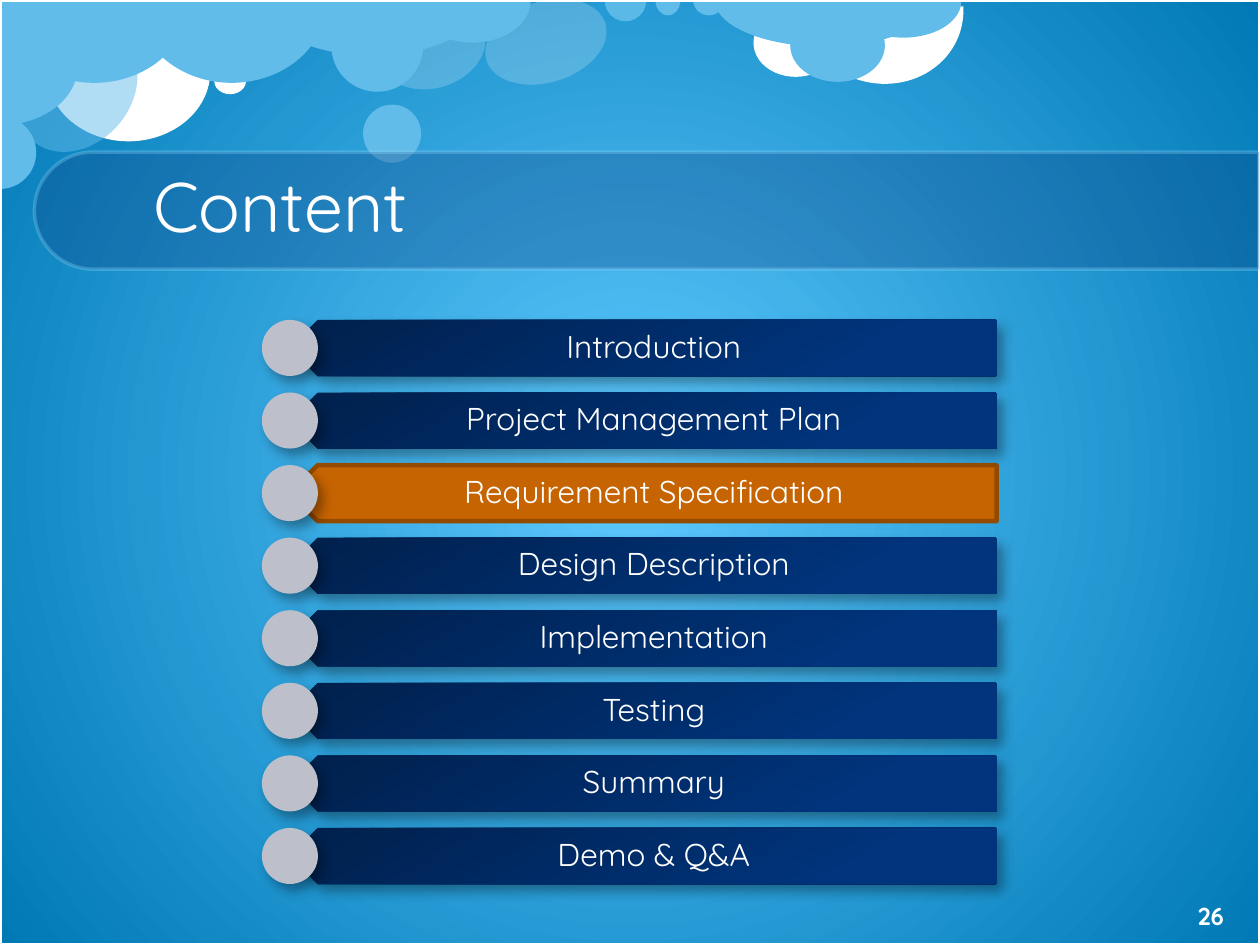
"""Build an agenda slide with a cloudy sky and one highlighted section."""
from lxml import etree
from pptx import Presentation
from pptx.dml.color import RGBColor
from pptx.enum.shapes import MSO_SHAPE
from pptx.enum.text import MSO_ANCHOR, PP_ALIGN
from pptx.oxml import parse_xml
from pptx.oxml.ns import nsdecls, qn
from pptx.util import Cm, Pt

OVAL, PIE, ARC = MSO_SHAPE.OVAL, MSO_SHAPE.PIE, MSO_SHAPE.ARC
RECT, PLATE = MSO_SHAPE.RECTANGLE, MSO_SHAPE.PENTAGON
BAND = MSO_SHAPE.ROUND_2_SAME_RECTANGLE
LEFT, CENTER = PP_ALIGN.LEFT, PP_ALIGN.CENTER
MIDDLE = MSO_ANCHOR.MIDDLE

THEME = {
    "font": "Quicksand", "title": 40, "item": 18, "page": 14,
    "white": "FFFFFF", "cloud": "62BCE9", "pale": "8FD9FB",
    "glow": "5DC9FF", "sky": "0079B5", "band": "073779",
    "dark": "00204C", "navy": "00347C", "dot": "BDBFCB",
    "mark": "C76402", "edge": "934A01", "shade": "000000",
}


def add_form(kind, box, fill=None, alpha=100, line=None, width=2, fade=100,
             turn=0, adj=(), shade=False):
    form = slide.shapes.add_shape(kind, *map(Cm, box))
    form.shadow.inherit = False
    form.rotation = turn
    for i, value in enumerate(adj):
        form.adjustments[i] = value
    for part, name, share in ((form.fill, fill, alpha),
                              (form.line.fill, line, fade)):
        if name is None:
            part.background()
        elif isinstance(name, tuple):
            part.gradient()
            part.gradient_angle = 120
            for stop, tone, place in zip(part.gradient_stops, name, (0, 0.8)):
                stop.color.rgb = RGBColor.from_string(THEME[tone])
                stop.position = place
        else:
            part.solid()
            part.fore_color.rgb = RGBColor.from_string(THEME[name])
            if share < 100:
                root = form._element.spPr
                if part is not form.fill:
                    root = root.find(qn("a:ln"))
                tone = root.find(qn("a:solidFill"))[0]
                etree.SubElement(tone, qn("a:alpha"), val=str(share * 1000))
    if line:
        form.line.width = Pt(width)
    if shade:
        form._element.spPr.find(qn("a:effectLst")).append(parse_xml(
            f'<a:outerShdw {nsdecls("a")} blurRad="{Pt(7)}" dist="{Pt(5)}" '
            f'dir="{50 * 60000}" algn="tl" rotWithShape="0">'
            f'<a:srgbClr val="{THEME["shade"]}"><a:alpha val="35000"/>'
            '</a:srgbClr></a:outerShdw>'))


def add_text(text, box, size, align=CENTER, bold=False, space=None,
             inset=(0.25, 0.13, 0.25, 0.13)):
    frame = slide.shapes.add_textbox(*map(Cm, box)).text_frame
    frame.word_wrap = True
    frame.vertical_anchor = MIDDLE
    (frame.margin_left, frame.margin_top,
     frame.margin_right, frame.margin_bottom) = map(Cm, inset)
    para = frame.paragraphs[0]
    para.alignment = align
    para.line_spacing = space
    run = para.add_run()
    run.text = text
    run.font.name = THEME["font"]
    run.font.size = Pt(THEME[size])
    run.font.bold = bold
    run.font.color.rgb = RGBColor.from_string(THEME["white"])


deck = Presentation()
deck.slide_width, deck.slide_height = Cm(25.4), Cm(19.05)
slide = deck.slides.add_slide(deck.slide_layouts[6])

back = slide.background.fill
back.gradient()
for stop, tone in zip(back.gradient_stops, ("glow", "sky")):
    stop.color.rgb = RGBColor.from_string(THEME[tone])
lin = next(slide._element.iter(qn("a:lin")))
lin.getparent().replace(lin, parse_xml(
    f'<a:path {nsdecls("a")} path="circle">'
    '<a:fillToRect l="50000" t="50000" r="50000" b="50000"/></a:path>'))

HALF = (0, 108)
CLOUDS = (
    (OVAL, (7.9, -0.13, 1.63, 2.18), "white", 20, 72.8, ()),
    (OVAL, (0.94, 0.03, 3.3, 2.82), "white", 100, 0, ()),
    (ARC, (16.23, -1.52, 3.07, 3.33), "white", 100, 106.5, (151.8, 44.48)),
    (OVAL, (15.19, 0.18, 1.7, 1.37), "white", 100, 0, ()),
    (PIE, (-0.03, -1.68, 3.86, 3.35), "cloud", 100, 0, HALF),
    (PIE, (5.28, -1.12, 4.45, 2.24), "cloud", 100, 0, HALF),
    (OVAL, (7.32, 2.11, 1.17, 1.17), "cloud", 100, 0, ()),
    (OVAL, (0.48, 0.46, 2.16, 2.72), "cloud", 50, 41.8, ()),
    (PIE, (-0.74, 2.34, 1.47, 1.47), "cloud", 100, 270, HALF),
    (OVAL, (4.32, 1.37, 0.64, 0.53), "white", 100, 0, ()),
    (PIE, (2.74, -1.68, 3.86, 3.35), "cloud", 100, 0, HALF),
    (PIE, (14.4, -0.97, 4.45, 1.91), "cloud", 100, 0, HALF),
    (OVAL, (15.93, 0.18, 1.91, 1.47), "cloud", 100, 0, ()),
    (PIE, (17.04, -0.71, 2.34, 1.47), "cloud", 100, 0, HALF),
    (OVAL, (10.19, -0.41, 1.63, 2.51), "white", 20, 72.8, ()),
    (PIE, (12.19, -0.41, 0.84, 0.84), "pale", 50, 0, HALF),
    (PIE, (13.21, -0.33, 0.51, 0.64), "cloud", 100, 0, HALF),
    (PIE, (13.97, -0.33, 0.64, 0.64), "cloud", 100, 0, HALF),
    (OVAL, (6.68, 0, 1.85, 1.85), "cloud", 100, 0, ()),
    (PIE, (8.36, -0.84, 2.34, 1.7), "cloud", 100, 0, HALF),
    (PIE, (-1.19, -0.23, 2.36, 3.15), "cloud", 100, 270, HALF),
)
for kind, box, fill, alpha, turn, adj in CLOUDS:
    add_form(kind, box, fill, alpha, turn=turn, adj=adj)

add_form(RECT, (0, 0, 25.4, 19.05), line="white")
add_form(BAND, (11.86, -8.1, 2.36, 24.69), "band", 30, line="pale", fade=30,
         turn=270, adj=(0.5, 0))
add_text("Content", (2.84, 3, 20.57, 1.98), "title", align=LEFT, space=Pt(56))

ITEMS = ("Introduction", "Project Management Plan",
         "Requirement Specification", "Design Description",
         "Implementation", "Testing", "Summary", "Demo & Q&A")
ACTIVE = "Requirement Specification"
TOP, STEP, TALL = 6.45, 1.463, 1.13
for i, item in enumerate(ITEMS):
    top = TOP + i * STEP
    bar = (5.84, top, 14.25, TALL)
    if item == ACTIVE:
        add_form(PLATE, bar, "mark", line="edge", width=2.5, turn=180)
    else:
        add_form(PLATE, bar, ("dark", "navy"), turn=180, shade=True)
    add_text(item, (6.12, top, 13.97, TALL), "item", space=0.9,
             inset=(0.51, 0.18, 0.36, 0.18))
    add_form(OVAL, (5.28, top, TALL, TALL), "dot", shade=True)

add_text("26", (23.42, 17.91, 1.98, 1.09), "page", bold=True)
deck.save("out.pptx")
